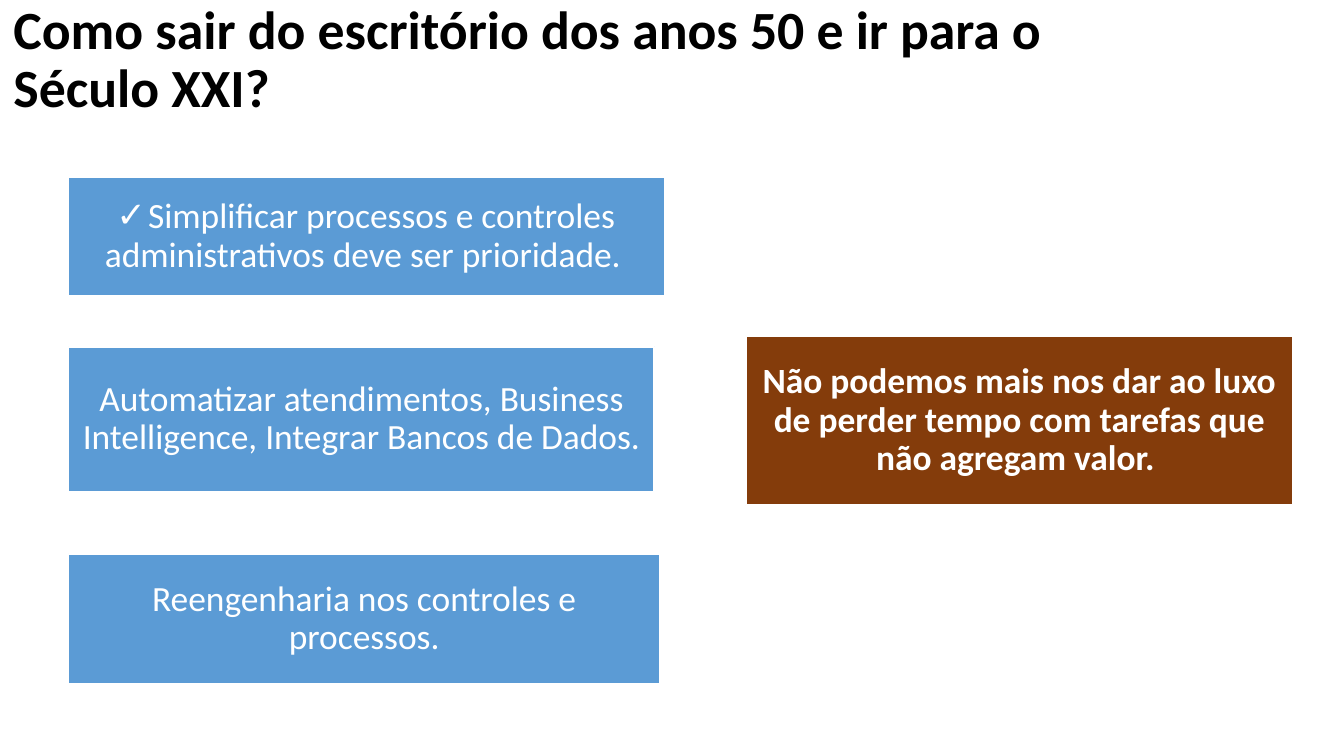
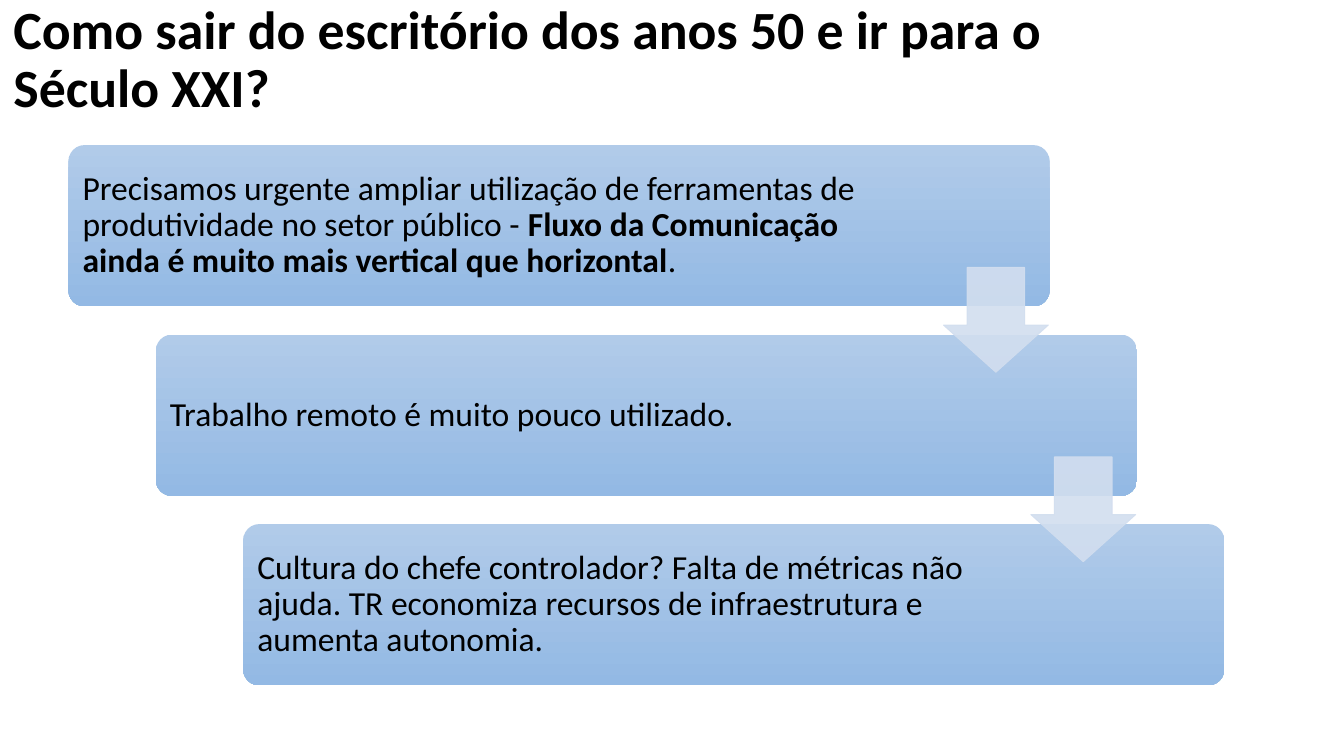
import pptx
import pptx.dml.color
import pptx.enum.shapes
import pptx.enum.text
import pptx.oxml
import pptx.oxml.ns
import pptx.util
from pptx.util import Inches

COLOURS = {
    "black": "000000",
    "white": "FFFFFF",
    "blue": "5B9BD5",
    "brown": "843C0B",
    "step_top": "B1CBE9",
    "step_bottom": "93B9E4",
    "arrow": "D2DEEF",
}
FONT = "Calibri"
TITLE = "Como sair do escritório dos anos 50 e ir para o Século XXI?"
PRESET = pptx.enum.shapes.MSO_SHAPE
ALIGN = pptx.enum.text.PP_ALIGN
NAMESPACE = pptx.oxml.ns.nsdecls("a")


def colour(name):
    return pptx.dml.color.RGBColor.from_string(COLOURS[name])


def write(shape, spans, size, ink, align, margins):
    """Fill a shape with one paragraph of (text, bold) spans and return it."""
    frame = shape.text_frame
    frame_format = {
        "word_wrap": True,
        "auto_size": pptx.enum.text.MSO_AUTO_SIZE.NONE,
        "vertical_anchor": pptx.enum.text.MSO_ANCHOR.MIDDLE,
    }
    for side, length in zip(("left", "top", "right", "bottom"), margins):
        frame_format["margin_" + side] = Inches(length)
    for name, value in frame_format.items():
        setattr(frame, name, value)
    para = frame.paragraphs[0]
    para.alignment = align
    para.line_spacing = 0.9
    for text, bold in spans:
        span = para.add_run()
        span.text = text
        font_format = {"name": FONT, "size": pptx.util.Pt(size), "bold": bold}
        for name, value in font_format.items():
            setattr(span.font, name, value)
        span.font.color.rgb = colour(ink)
    return para


# Widescreen page, 16:9
deck = pptx.Presentation()
deck.slide_width = Inches(10)
deck.slide_height = deck.slide_width * 9 // 16

# Both pages carry the same title
pages = []
for _ in range(2):
    page = deck.slides.add_slide(deck.slide_layouts[5])
    title = page.shapes.title
    title_place = {"left": 0, "top": 0.14, "width": 8.23, "height": 0.63}
    for name, value in title_place.items():
        setattr(title, name, Inches(value))
    write(title, [(TITLE, True)], 28.8, "black", ALIGN.LEFT, (0.1, 0.05, 0.1, 0.05))
    pages.append(page)
actions_page, culture_page = pages

# Actions on the left, conclusion on the right
actions = [
    ((0.51, 1.32, 4.44, 0.88), "blue", False, "✓",
     "Simplificar processos e controles administrativos deve ser prioridade. "),
    ((0.51, 2.58, 4.36, 1.08), "blue", False, None,
     "Automatizar atendimentos, Business Intelligence, Integrar Bancos de Dados. "),
    ((0.51, 4.12, 4.4, 0.97), "blue", False, None,
     "Reengenharia nos controles e processos."),
    ((5.55, 2.5, 4.07, 1.26), "brown", True, None,
     "Não podemos mais nos dar ao luxo de perder tempo com tarefas que não agregam valor. "),
]
for place, fill, bold, bullet, text in actions:
    box = actions_page.shapes.add_shape(PRESET.RECTANGLE, *map(Inches, place))
    box.shadow.inherit = False
    box.fill.solid()
    box.fill.fore_color.rgb = colour(fill)
    box.line.color.rgb = colour("white")
    box.line.width = pptx.util.Pt(1)
    para = write(box, [(text, bold)], 19, "white", ALIGN.CENTER, [0.08] * 4)
    if bullet:
        for mark in (f'buFont {NAMESPACE} typeface="{FONT}"',
                     f'buChar {NAMESPACE} char="{bullet}"'):
            para._p.get_or_add_pPr().append(pptx.oxml.parse_xml(f"<a:{mark}/>"))

# Staircase of steps; the right margin keeps text clear of the arrows
step_right, step_down = 0.65, 1.41
steps = [
    (1.3, [
        ("Precisamos urgente ampliar utilização de ferramentas de produtividade "
         "no setor público - ", False),
        ("Fluxo da Comunicação ainda é muito mais vertical que horizontal", True),
        (".", False)]),
    (1.5, [("Trabalho remoto é muito pouco utilizado.", False)]),
    (1.5, [
        ("Cultura do chefe controlador? Falta de métricas não ajuda. TR economiza "
         "recursos de infraestrutura e aumenta autonomia. ", False)]),
]
for index, (right_margin, spans) in enumerate(steps):
    box = culture_page.shapes.add_shape(
        PRESET.ROUNDED_RECTANGLE,
        Inches(0.51 + index * step_right), Inches(1.08 + index * step_down),
        Inches(7.3), Inches(1.2))
    box.adjustments[0] = 0.1
    box.shadow.inherit = False
    box.fill.gradient()
    box.fill.gradient_angle = 270
    for stop, position, name in zip(
            box.fill.gradient_stops, (0, 1), ("step_top", "step_bottom")):
        stop.position = position
        stop.color.rgb = colour(name)
    box.line.fill.background()
    write(box, spans, 18, "black", ALIGN.LEFT, (0.07, 0.07, right_margin, 0.07))

# Translucent arrows between steps
for index in range(len(steps) - 1):
    arrow = culture_page.shapes.add_shape(
        PRESET.DOWN_ARROW,
        Inches(7.02 + index * step_right), Inches(1.99 + index * step_down),
        Inches(0.78), Inches(0.78))
    arrow.adjustments[0] = 0.55
    arrow.adjustments[1] = 0.45
    arrow.shadow.inherit = False
    arrow.fill.solid()
    arrow.fill.fore_color.rgb = colour("arrow")
    arrow.line.color.rgb = colour("arrow")
    arrow.line.width = pptx.util.Pt(0.5)
    for tint in arrow._element.spPr.iter(pptx.oxml.ns.qn("a:srgbClr")):
        tint.append(pptx.oxml.parse_xml(f'<a:alpha {NAMESPACE} val="90000"/>'))

deck.save("out.pptx")
